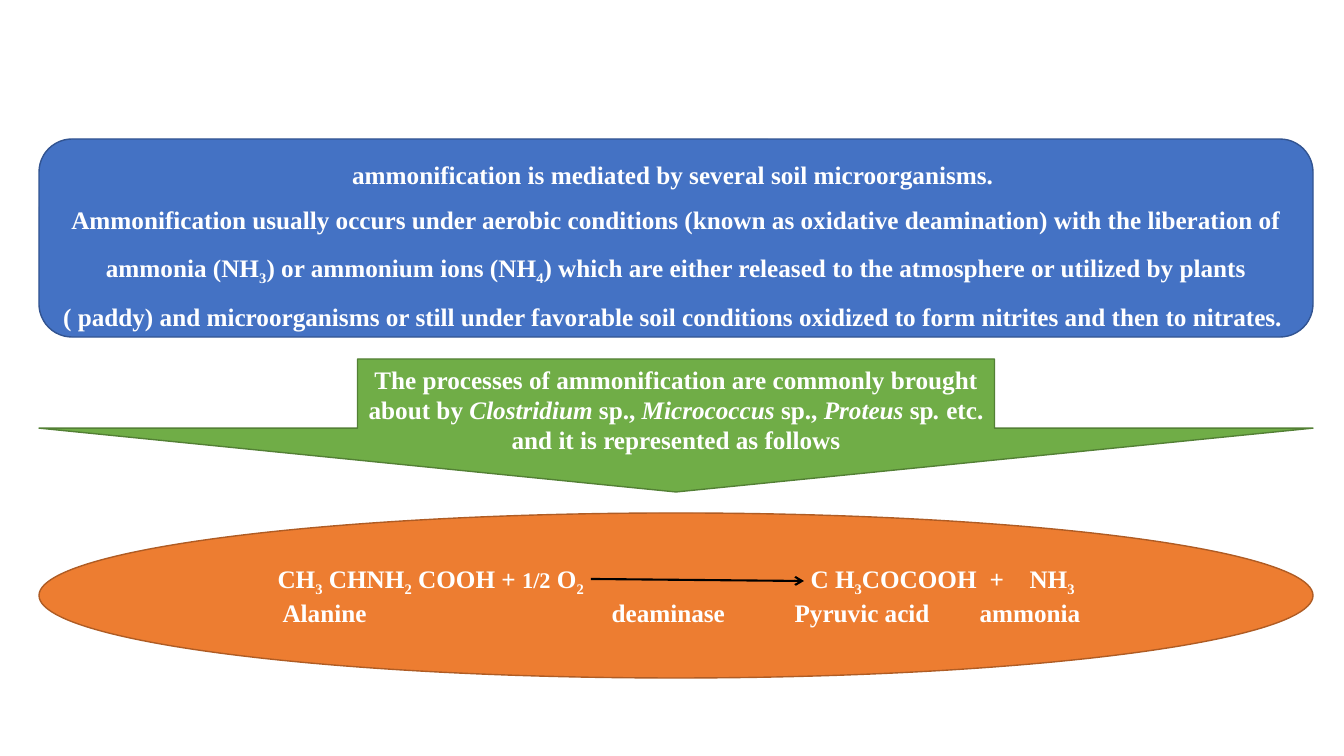
from lxml import etree
from pptx import Presentation
from pptx.dml.color import RGBColor
from pptx.enum.shapes import MSO_CONNECTOR, MSO_SHAPE
from pptx.enum.text import MSO_ANCHOR, PP_ALIGN
from pptx.oxml.ns import qn
from pptx.util import Emu, Pt

PX = 914400 / 100.8
WHITE = RGBColor(0xFF, 0xFF, 0xFF)
BLACK = RGBColor(0, 0, 0)
BLUE, BLUE_EDGE = RGBColor(0x44, 0x72, 0xC4), RGBColor(0x32, 0x54, 0x91)
GREEN, GREEN_EDGE = RGBColor(0x70, 0xAD, 0x47), RGBColor(0x53, 0x80, 0x35)
ORANGE, ORANGE_EDGE = RGBColor(0xED, 0x7D, 0x31), RGBColor(0xAF, 0x5C, 0x24)
ROUNDED, DOWN_ARROW, OVAL = MSO_SHAPE.ROUNDED_RECTANGLE, MSO_SHAPE.DOWN_ARROW, MSO_SHAPE.OVAL
CENTER, LEFT = PP_ALIGN.CENTER, PP_ALIGN.LEFT
MIDDLE = MSO_ANCHOR.MIDDLE
PLAIN, ITALIC, SUBSCRIPT, SMALL = range(4)


def px(length):
    return Emu(round(length * PX))


def add_spans(para, spans):
    """Fill a paragraph with (text, style) pairs in the slide's bold white type."""
    for text, style in spans:
        span = para.add_run()
        span.text = text
        span.font.name = "Times New Roman"
        span.font.size = Pt(16 if style == SMALL else 18)
        span.font.bold = True
        span.font.italic = style == ITALIC
        span.font.color.rgb = WHITE
        if style == SUBSCRIPT:
            span._r.get_or_add_rPr().set("baseline", "-25000")


deck = Presentation()
deck.slide_width, deck.slide_height = px(1344), px(756)
page = deck.slides.add_slide(deck.slide_layouts[6])

# Three stacked shapes: kind, top, height, fill, edge
bands = []
for kind, top, height, fill, edge in [
    (ROUNDED, 139, 198, BLUE, BLUE_EDGE),
    (DOWN_ARROW, 359, 133, GREEN, GREEN_EDGE),
    (OVAL, 513, 165, ORANGE, ORANGE_EDGE),
]:
    band = page.shapes.add_shape(kind, px(39), px(top), px(1274), px(height))
    band.shadow.inherit = False
    band.fill.solid()
    band.fill.fore_color.rgb = fill
    band.line.color.rgb = edge
    band.line.width = Pt(1)
    band.text_frame.word_wrap = True
    band.text_frame.vertical_anchor = MIDDLE
    bands.append(band)
overview, organisms, reaction = bands
organisms.adjustments[1] = 0.48

# Overview
overview_lines = [
    [("ammonification is mediated by several soil microorganisms. ", PLAIN)],
    [
        ("Ammonification usually occurs under aerobic conditions (known as oxidative "
         "deamination) with the liberation of ammonia (NH", PLAIN),
        ("3", SUBSCRIPT),
        (") or ammonium ions (NH", PLAIN),
        ("4", SUBSCRIPT),
        (") which are either released to the atmosphere or utilized by plants ( paddy) "
         "and microorganisms or still under favorable soil conditions oxidized to form "
         "nitrites and then to nitrates. ", PLAIN),
    ],
]
frame = overview.text_frame
for index, spans in enumerate(overview_lines):
    para = frame.add_paragraph() if index else frame.paragraphs[0]
    para.alignment = CENTER
    para.line_spacing = 1.5
    add_spans(para, spans)

# Organisms
para = organisms.text_frame.paragraphs[0]
para.alignment = CENTER
add_spans(para, [
    ("The processes of ammonification are commonly brought about by ", PLAIN),
    ("Clostridium ", ITALIC),
    ("sp., ", PLAIN),
    ("Micrococcus ", ITALIC),
    ("sp., ", PLAIN),
    ("Proteus ", ITALIC),
    ("sp", PLAIN),
    (". ", ITALIC),
    ("etc. and it is represented as follows", PLAIN),
])

# Reaction: the formulas and their names stand on tab stops
reaction_lines = [
    ([52, 585, 764, 804], [
        ("\tCH", PLAIN),
        ("3", SUBSCRIPT),
        (" CHNH", PLAIN),
        ("2", SUBSCRIPT),
        (" COOH + ", PLAIN),
        ("1/2", SMALL),
        (" O", PLAIN),
        ("2", SUBSCRIPT),
        ("\tC H", PLAIN),
        ("3", SUBSCRIPT),
        ("COCOOH\t+\tNH", PLAIN),
        ("3", SUBSCRIPT),
    ]),
    ([57, 386, 569, 754], [("\tAlanine\tdeaminase\tPyruvic acid\tammonia", PLAIN)]),
]
frame = reaction.text_frame
frame.margin_left = frame.margin_right = 0
for index, (stops, spans) in enumerate(reaction_lines):
    para = frame.add_paragraph() if index else frame.paragraphs[0]
    para.alignment = LEFT
    tabs = etree.SubElement(para._p.get_or_add_pPr(), qn("a:tabLst"))
    for stop in stops:
        etree.SubElement(tabs, qn("a:tab"), pos=str(px(stop)), algn="l")
    add_spans(para, spans)

arrow = page.shapes.add_connector(MSO_CONNECTOR.STRAIGHT, px(591), px(579), px(804), px(581))
arrow.line.color.rgb = BLACK
arrow.line.width = Pt(1.5)
etree.SubElement(arrow.line._get_or_add_ln(), qn("a:tailEnd"), type="arrow")
etree.SubElement(arrow._element.spPr, qn("a:effectLst"))

deck.save("out.pptx")
